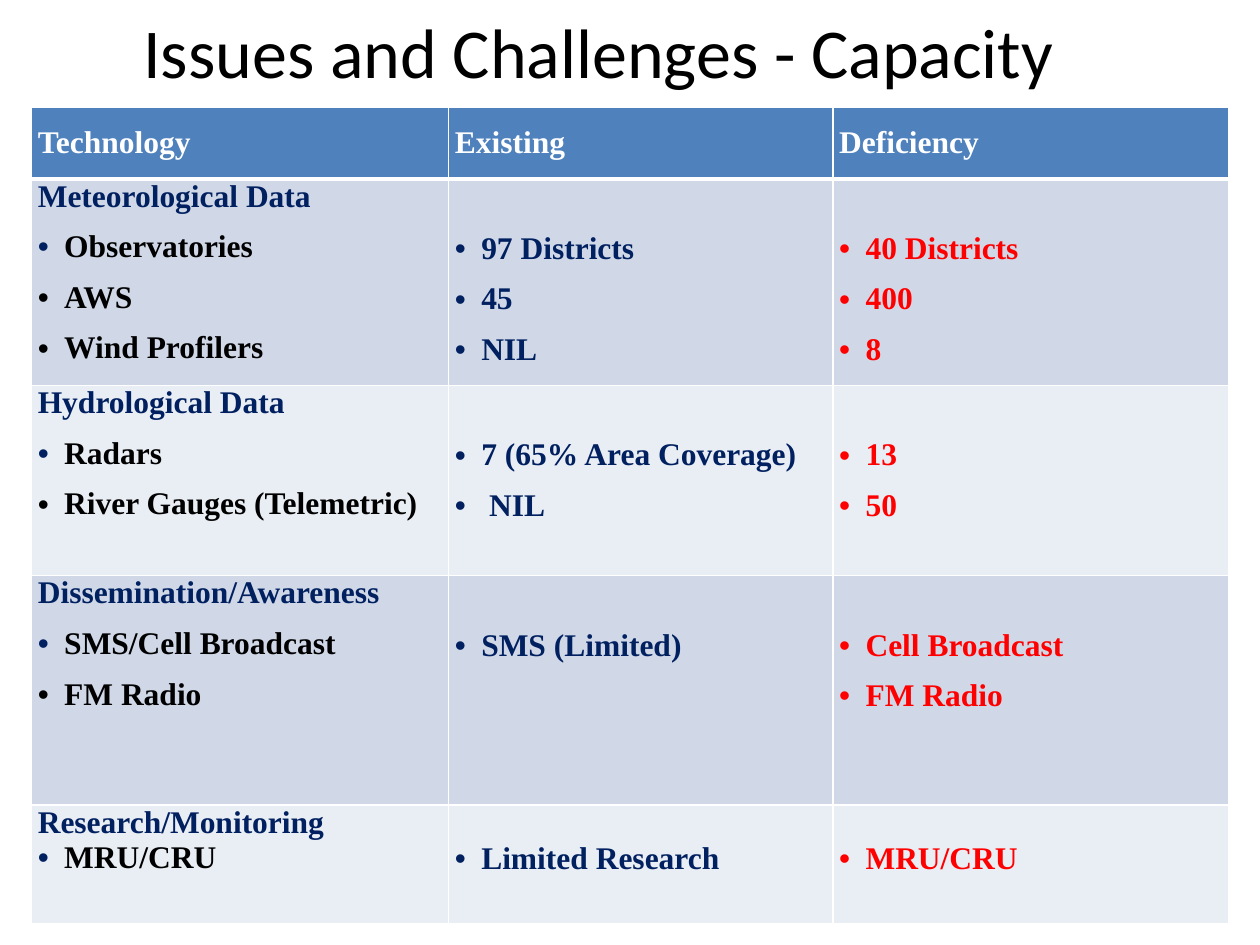
from dataclasses import dataclass

from lxml import etree
from pptx import Presentation
from pptx import util as u
from pptx.dml.color import RGBColor
from pptx.enum import text
from pptx.oxml import ns


@dataclass(frozen=True)
class Theme:
    title_font: str = "Calibri"
    table_font: str = "Times New Roman"
    title_size: int = 40
    table_size: int = 18
    white: str = "FFFFFF"
    black: str = "000000"
    navy: str = "002060"
    red: str = "FF0000"
    header: str = "4F81BD"
    bands: tuple = ("D0D8E8", "E9EDF4")


THEME = Theme()
COLUMN_WIDTHS = (3.31, 3.05, 3.14)
HEADERS = ("Technology", "Existing", "Deficiency")
HEADER_HEIGHT = 0.57
LINE_HEIGHT = 0.29
BULLET_INDENT = 0.21

# heading, row height, (space before, space after), bullets of the three columns
SECTIONS = [
    ("Meteorological Data", 1.64, (6, 3), (
        ["Observatories", "AWS", "Wind Profilers"],
        ["97 Districts", "45", "NIL"],
        ["40 Districts", "400", "8"])),
    ("Hydrological Data", 1.51, (6, 3), (
        ["Radars", "River Gauges (Telemetric)"],
        ["7 (65% Area Coverage)", " NIL"],
        ["13", "50"])),
    ("Dissemination/Awareness", 1.82, (6, 3), (
        ["SMS/Cell Broadcast", "FM Radio"],
        ["SMS (Limited)"],
        ["Cell Broadcast", "FM Radio"])),
    ("Research/Monitoring", 0.94, (0, 0), (
        ["MRU/CRU"], ["Limited Research"], ["MRU/CRU"])),
]


def format_runs(p, font, size, color, bold=False):
    for r in p.runs:
        r.font.name = font
        r.font.size = u.Pt(size)
        r.font.bold = bold
        r.font.color.rgb = RGBColor.from_string(color)


def add_bullet(p, color):
    """Give the paragraph a hanging bullet; call it after spacing is set."""
    pPr = p._p.get_or_add_pPr()
    pPr.set("marL", str(u.Inches(BULLET_INDENT)))
    pPr.set("indent", str(-u.Inches(BULLET_INDENT)))
    clr = etree.SubElement(pPr, ns.qn("a:buClr"))
    etree.SubElement(clr, ns.qn("a:srgbClr"), val=color)
    etree.SubElement(pPr, ns.qn("a:buFont"), typeface="Arial")
    etree.SubElement(pPr, ns.qn("a:buChar"), char="•")


def style_cell(cell, fill, top=1, bottom=1):
    """Set margins, white borders (widths in points) and then the fill."""
    cell.margin_left = cell.margin_right = u.Inches(0.05)
    cell.margin_top = cell.margin_bottom = 0
    tcPr = cell._tc.get_or_add_tcPr()
    for side, width in (("L", 1), ("R", 1), ("T", top), ("B", bottom)):
        ln = etree.SubElement(tcPr, ns.qn(f"a:ln{side}"), w=str(u.Pt(width)))
        solid = etree.SubElement(ln, ns.qn("a:solidFill"))
        etree.SubElement(solid, ns.qn("a:srgbClr"), val=THEME.white)
    cell.fill.solid()
    cell.fill.fore_color.rgb = RGBColor.from_string(fill)


def write_lines(cell, lines, spacing):
    """Write (text, colour, bullet colour or None) lines into a cell."""
    tf = cell.text_frame
    tf.text = "\n".join(line for line, _, _ in lines)
    for p, (_, color, bullet) in zip(tf.paragraphs, lines):
        p.space_before, p.space_after = map(u.Pt, spacing)
        format_runs(p, THEME.table_font, THEME.table_size, color, bold=True)
        if bullet:
            add_bullet(p, bullet)


def add_title(s, title):
    sp = s.shapes.add_textbox(u.Inches(1), u.Inches(0.02), u.Inches(7.5), u.Inches(0.77))
    tf = sp.text_frame
    tf.word_wrap = False
    tf.text = title
    p = tf.paragraphs[0]
    p.alignment = text.PP_ALIGN.CENTER
    format_runs(p, THEME.title_font, THEME.title_size, THEME.black)


def fill_header(table):
    for cell, label in zip(table.rows[0].cells, HEADERS):
        style_cell(cell, THEME.header, bottom=3)
        cell.vertical_anchor = text.MSO_ANCHOR.MIDDLE
        write_lines(cell, [(label, THEME.white, None)], (6, 0))


def fill_section(row, index, heading, spacing, columns):
    """Fill one band; the value columns start level with the first bullet."""
    for col, (cell, items) in enumerate(zip(row.cells, columns)):
        style_cell(cell, THEME.bands[index % 2], top=3 if index == 0 else 1)
        color = (THEME.black, THEME.navy, THEME.red)[col]
        lines = [(item, color, color) for item in items]
        if col == 0:
            lines[0] = (items[0], color, THEME.navy)
            lines.insert(0, (heading, THEME.navy, None))
        else:
            cell.margin_top = u.Inches(LINE_HEIGHT) + u.Pt(sum(spacing))
        write_lines(cell, lines, spacing)


def add_capacity_table(s):
    heights = [HEADER_HEIGHT] + [height for _, height, _, _ in SECTIONS]
    table = s.shapes.add_table(
        len(heights), len(COLUMN_WIDTHS), u.Inches(0.25), u.Inches(0.85),
        u.Inches(sum(COLUMN_WIDTHS)), u.Inches(sum(heights))).table
    for column, width in zip(table.columns, COLUMN_WIDTHS):
        column.width = u.Inches(width)
    for row, height in zip(table.rows, heights):
        row.height = u.Inches(height)
    fill_header(table)
    for i, (heading, _, spacing, columns) in enumerate(SECTIONS):
        fill_section(table.rows[i + 1], i, heading, spacing, columns)


def main():
    prs = Presentation()
    prs.slide_width, prs.slide_height = u.Inches(10), u.Inches(7.5)
    s = prs.slides.add_slide(prs.slide_layouts[6])
    add_title(s, "Issues and Challenges - Capacity")
    add_capacity_table(s)
    prs.save("out.pptx")


if __name__ == "__main__":
    main()
